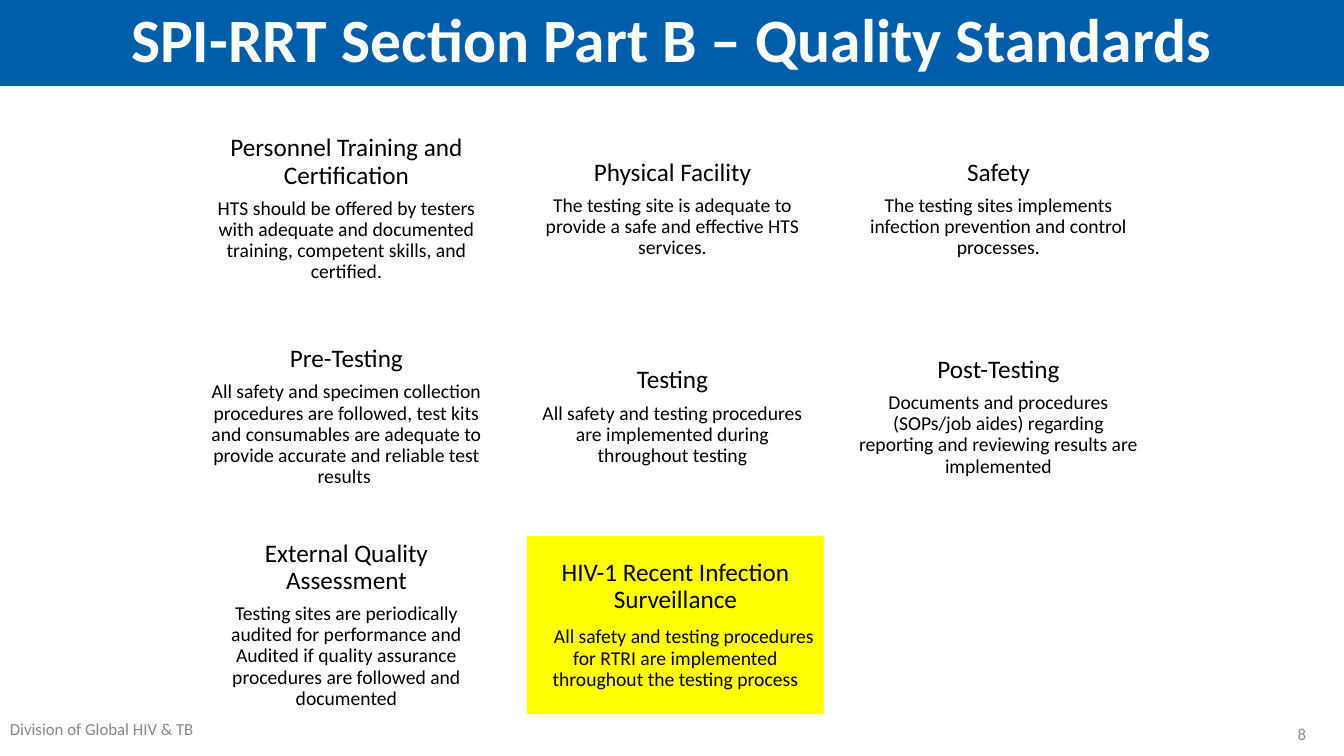
from pptx import Presentation
from pptx.dml.color import RGBColor
from pptx.enum.shapes import MSO_SHAPE
from pptx.enum.text import MSO_ANCHOR, MSO_AUTO_SIZE, PP_ALIGN
from pptx.util import Emu, Pt

RECT = MSO_SHAPE.RECTANGLE
TOP, MIDDLE = MSO_ANCHOR.TOP, MSO_ANCHOR.MIDDLE
LEFT, CENTER, RIGHT = PP_ALIGN.LEFT, PP_ALIGN.CENTER, PP_ALIGN.RIGHT
NO_FIT = MSO_AUTO_SIZE.NONE
COLORS = {"blue": "005DAA", "white": "FFFFFF", "black": "000000",
          "yellow": "FFFF00", "footer": "898989", "number": "8C8C8C"}


def px(n):
    return Emu(round(n * 914400 / 100.8))


def write(tf, text, size, color="black", bold=False, align=CENTER, line=0.9,
          before=0, after=0, indent=0, new=False):
    p = tf.add_paragraph() if new else tf.paragraphs[0]
    p.alignment, p.line_spacing = align, line
    p.space_before, p.space_after = Pt(before), Pt(after)
    if indent:
        p._p.get_or_add_pPr().set("indent", str(px(indent)))
    r = p.add_run()
    r.text = text
    r.font.name, r.font.size, r.font.bold = "Calibri", Pt(size), bold
    r.font.color.rgb = RGBColor.from_string(COLORS[color])


prs = Presentation()
prs.slide_width, prs.slide_height = px(1344), px(756)
s = prs.slides.add_slide(prs.slide_layouts[5])

title = s.shapes.title
title.left, title.top, title.width, title.height = px(0), px(-1), px(1344), px(87)
title.fill.solid()
title.fill.fore_color.rgb = RGBColor.from_string(COLORS["blue"])
tf = title.text_frame
tf.margin_left = tf.margin_right = px(30)
tf.margin_top = tf.margin_bottom = px(5)
tf.vertical_anchor, tf.word_wrap, tf.auto_size = MIDDLE, True, NO_FIT
write(tf, "SPI-RRT Section Part B – Quality Standards", 44, "white", bold=True)

labels = [
    ("Division of Global HIV & TB", 0, 219, TOP, LEFT, "footer"),
    ("8", 1200, 116, MIDDLE, RIGHT, "number"),
]
for text, x, w, anchor, align, color in labels:
    tf = s.shapes.add_textbox(px(x), px(714), px(w), px(40)).text_frame
    tf.word_wrap, tf.vertical_anchor = True, anchor
    write(tf, text, 12, color, align=align, line=1.0)

standards = [
    ("Personnel Training and Certification",
     "HTS should be offered by testers with adequate and documented training, "
     "competent skills, and certified."),
    ("Physical Facility",
     "The testing site is adequate to provide a safe and effective HTS services."),
    ("Safety",
     "The testing sites implements infection prevention and control processes."),
    ("Pre-Testing",
     "All safety and specimen collection procedures are followed, test kits and "
     "consumables are adequate to provide accurate and reliable test results "),
    ("Testing",
     "All safety and testing procedures are implemented during throughout testing"),
    ("Post-Testing",
     "Documents and procedures (SOPs/job aides) regarding reporting and reviewing "
     "results are implemented"),
    ("External Quality Assessment",
     "Testing sites are periodically audited for performance and Audited if quality "
     "assurance procedures are followed and documented"),
    ("HIV-1 Recent Infection Surveillance",
     "All safety and testing procedures for RTRI are implemented throughout the "
     "testing process"),
]
for i, (heading, body) in enumerate(standards):
    row, col = divmod(i, 3)
    marked = i == len(standards) - 1
    x = 198 + 326 * col + (3 if marked else 0)
    sp = s.shapes.add_shape(RECT, px(x), px(120 + 208 * row), px(297), px(178))
    sp.shadow.inherit = False
    sp.fill.solid()
    sp.fill.fore_color.rgb = RGBColor.from_string(COLORS["yellow" if marked else "white"])
    sp.line.fill.background()
    tf = sp.text_frame
    tf.margin_left = tf.margin_right = tf.margin_top = tf.margin_bottom = px(7)
    tf.word_wrap, tf.vertical_anchor = True, MIDDLE
    write(tf, heading, 18, after=6.3)
    write(tf, body, 14, after=4.9, before=3 if marked else 0,
          indent=17 if marked else 0, new=True)

prs.save("out.pptx")
